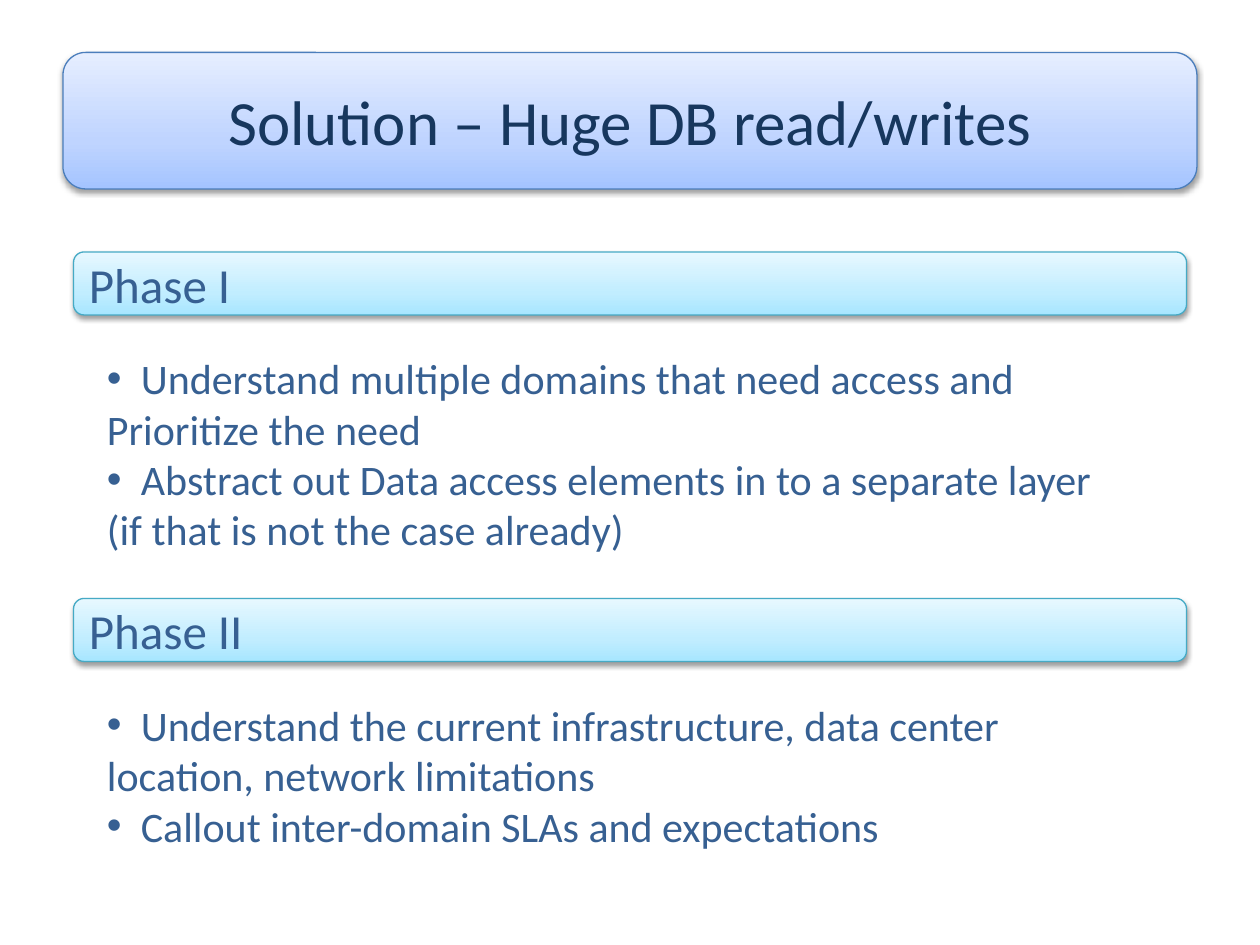
from lxml.etree import SubElement
from pptx import Presentation
from pptx.dml.color import RGBColor
from pptx.enum.shapes import MSO_SHAPE
from pptx.enum.text import MSO_ANCHOR, MSO_AUTO_SIZE, PP_ALIGN
from pptx.oxml.ns import qn
from pptx.util import Pt

NAVY = RGBColor(0x17, 0x37, 0x5E)
BLUE = RGBColor(0x37, 0x60, 0x92)
TITLE_LINE = RGBColor(0x4B, 0x7E, 0xBC)
PHASE_LINE = RGBColor(0x46, 0xAA, 0xC5)
BLACK = RGBColor(0, 0, 0)
TITLE_FILL = [(0, RGBColor(0xA4, 0xC4, 0xFF)), (35, RGBColor(0xBF, 0xD4, 0xFF)),
              (100, RGBColor(0xE6, 0xEE, 0xFF))]
PHASE_FILL = [(0, RGBColor(0xA7, 0xE6, 0xFF)), (35, RGBColor(0xC1, 0xED, 0xFF)),
              (100, RGBColor(0xE7, 0xF8, 0xFF))]

TITLE = "Solution – Huge DB read/writes"
PHASES = [
    ("Phase I", [
        "Understand multiple domains that need access and Prioritize the need",
        "Abstract out Data access elements in to a separate layer "
        "(if that is not the case already)",
    ], 123.84),
    ("Phase II", [
        "Understand the current infrastructure, data center location, network limitations",
        "Callout inter-domain SLAs and expectations",
    ], 94.32),
]
PHASE_TOP, PHASE_STEP, BODY_OFFSET = 144, 198, 54
BULLET_GAP = 19.4
TITLE_FONT = {"name": "Calibri", "size": Pt(36)}
PHASE_FONT = {"name": "Calibri", "size": Pt(28)}
BODY_FONT = {"name": "Calibri", "size": Pt(24)}


def add_node(parent, tag, **attrs):
    return SubElement(parent, qn(tag), {k: str(v) for k, v in attrs.items()})


def add_run(p, text, font, color):
    r = p.add_run()
    r.text = text
    for key, value in font.items():
        setattr(r.font, key, value)
    r.font.color.rgb = color


def add_banner(s, box, text, stops, line, font, color, align):
    sp = s.shapes.add_shape(MSO_SHAPE.ROUNDED_RECTANGLE, *map(Pt, box))
    sp.fill.gradient()
    sp.fill.gradient_angle = 90
    stop_list = sp._element.spPr.find(".//" + qn("a:gsLst"))
    stop_list.clear()
    for position, stop_color in stops:
        stop = add_node(stop_list, "a:gs", pos=position * 1000)
        add_node(stop, "a:srgbClr", val=stop_color)
    sp.line.color.rgb = line
    sp.line.width = Pt(0.75)
    sp.shadow.inherit = False
    shadow = add_node(sp._element.spPr.find(qn("a:effectLst")), "a:outerShdw",
                      blurRad=Pt(3.1), dist=Pt(1.6), dir=90 * 60000, rotWithShape=0)
    add_node(add_node(shadow, "a:srgbClr", val=BLACK), "a:alpha", val=38000)
    tf = sp.text_frame
    tf.word_wrap = True
    tf.vertical_anchor = MSO_ANCHOR.MIDDLE
    p = tf.paragraphs[0]
    p.alignment = align
    add_run(p, text, font, color)


def add_bullets(s, box, items):
    tf = s.shapes.add_textbox(*map(Pt, box)).text_frame
    tf.word_wrap = True
    tf.auto_size = MSO_AUTO_SIZE.SHAPE_TO_FIT_TEXT
    for i, item in enumerate(items):
        p = tf.add_paragraph() if i else tf.paragraphs[0]
        pPr = p._p.get_or_add_pPr()
        add_node(pPr, "a:buFont", typeface="Arial")
        add_node(pPr, "a:buChar", char="•")
        tabs = add_node(pPr, "a:tabLst")
        add_node(tabs, "a:tab", pos=Pt(BULLET_GAP), algn="l")
        add_run(p, "\t" + item, BODY_FONT, BLUE)


def main():
    prs = Presentation()
    prs.slide_width, prs.slide_height = Pt(720), Pt(540)
    s = prs.slides.add_slide(prs.slide_layouts[6])
    add_banner(s, (36, 30, 648, 78), TITLE, TITLE_FILL, TITLE_LINE,
               TITLE_FONT, NAVY, PP_ALIGN.CENTER)
    for i, (name, items, height) in enumerate(PHASES):
        top = PHASE_TOP + i * PHASE_STEP
        add_banner(s, (42, top, 636, 36), name, PHASE_FILL, PHASE_LINE,
                   PHASE_FONT, BLUE, PP_ALIGN.LEFT)
        add_bullets(s, (54, top + BODY_OFFSET, 594, height), items)
    prs.save("out.pptx")


if __name__ == "__main__":
    main()
